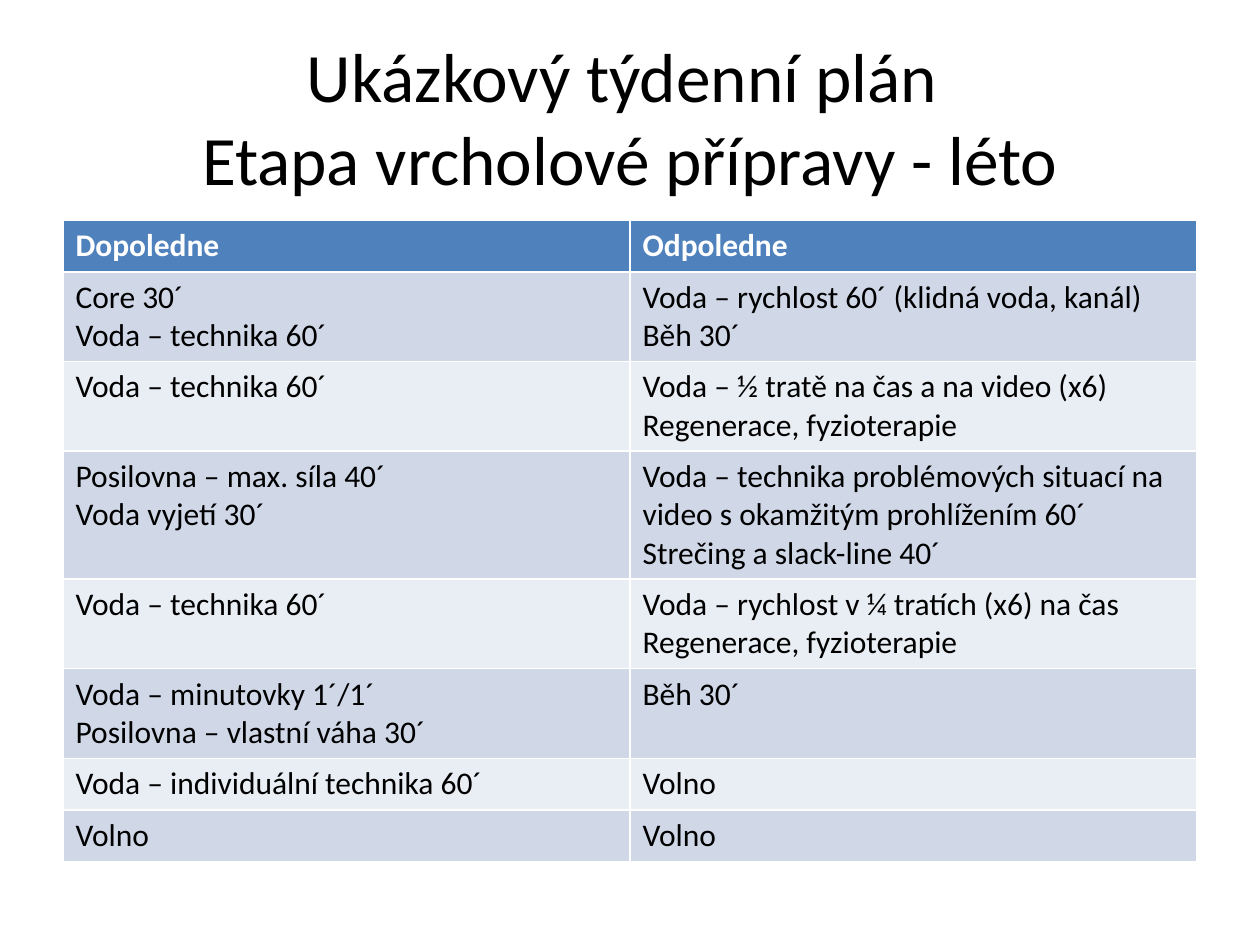
from pptx import Presentation
from pptx.dml.color import RGBColor
from pptx.enum.text import MSO_ANCHOR, PP_ALIGN
from pptx.util import Inches, Pt

CENTER = PP_ALIGN.CENTER
MIDDLE = MSO_ANCHOR.MIDDLE

BLACK = RGBColor(0x00, 0x00, 0x00)
WHITE = RGBColor(0xFF, 0xFF, 0xFF)
HEADER_BLUE = RGBColor(0x4F, 0x81, 0xBD)
BAND_DARK = RGBColor(0xD0, 0xD8, 0xE8)
BAND_LIGHT = RGBColor(0xE9, 0xED, 0xF4)

TITLE_ONLY = 5
TITLE_LINES = ["Ukázkový týdenní plán ", "Etapa vrcholové přípravy - léto"]
WEEK_PLAN = [
    (["Dopoledne"], ["Odpoledne"]),
    (["Core 30´", "Voda – technika 60´"],
     ["Voda – rychlost 60´ (klidná voda, kanál)", "Běh 30´"]),
    (["Voda – technika 60´"],
     ["Voda – ½ tratě na čas a na video (x6)", "Regenerace, fyzioterapie"]),
    (["Posilovna – max. síla 40´", "Voda vyjetí 30´"],
     ["Voda – technika problémových situací na video s okamžitým prohlížením 60´",
      "Strečing a slack-line 40´"]),
    (["Voda – technika 60´"],
     ["Voda – rychlost v ¼ tratích (x6) na čas", "Regenerace, fyzioterapie"]),
    (["Voda – minutovky 1´/1´", "Posilovna – vlastní váha 30´"], ["Běh 30´"]),
    (["Voda – individuální technika 60´"], ["Volno"]),
    (["Volno"], ["Volno"]),
]


class PlanSlide:
    font_name = "Calibri"
    title_size = Pt(39.6)
    cell_size = Pt(18)

    def __init__(self, deck):
        self.page = deck.slides.add_slide(deck.slide_layouts[TITLE_ONLY])

    def span(self, para, text, size, color, bold=False):
        span = para.add_run()
        span.text = text
        span.font.name = self.font_name
        span.font.size = size
        span.font.bold = bold
        span.font.color.rgb = color

    def title(self, lines, left, top, width, height):
        box = self.page.shapes.title
        box.left, box.top = Inches(left), Inches(top)
        box.width, box.height = Inches(width), Inches(height)
        box.text_frame.vertical_anchor = MIDDLE
        para = box.text_frame.paragraphs[0]
        para.alignment = CENTER
        for index, line in enumerate(lines):
            if index:
                para.add_line_break()
            self.span(para, line, self.title_size, BLACK)

    def cell(self, cell, lines, fill, color, bold):
        cell.fill.solid()
        cell.fill.fore_color.rgb = fill
        frame = cell.text_frame
        for index, line in enumerate(lines):
            para = frame.add_paragraph() if index else frame.paragraphs[0]
            self.span(para, line, self.cell_size, color, bold)

    def table(self, rows, left, top, width, row_height):
        table = self.page.shapes.add_table(
            len(rows), len(rows[0]), Inches(left), Inches(top),
            Inches(width), Inches(row_height * len(rows))).table
        for row_index, row in enumerate(rows):
            header = row_index == 0
            band = BAND_DARK if row_index % 2 else BAND_LIGHT
            fill = HEADER_BLUE if header else band
            color = WHITE if header else BLACK
            for column_index, lines in enumerate(row):
                self.cell(table.cell(row_index, column_index), lines, fill, color, header)


def main():
    deck = Presentation()
    deck.slide_width, deck.slide_height = Inches(10), Inches(7.5)
    plan = PlanSlide(deck)
    plan.title(TITLE_LINES, 0.5, 0.3, 9, 1.25)
    plan.table(WEEK_PLAN, 0.5, 1.75, 9, 0.41)
    deck.save("out.pptx")


if __name__ == "__main__":
    main()
